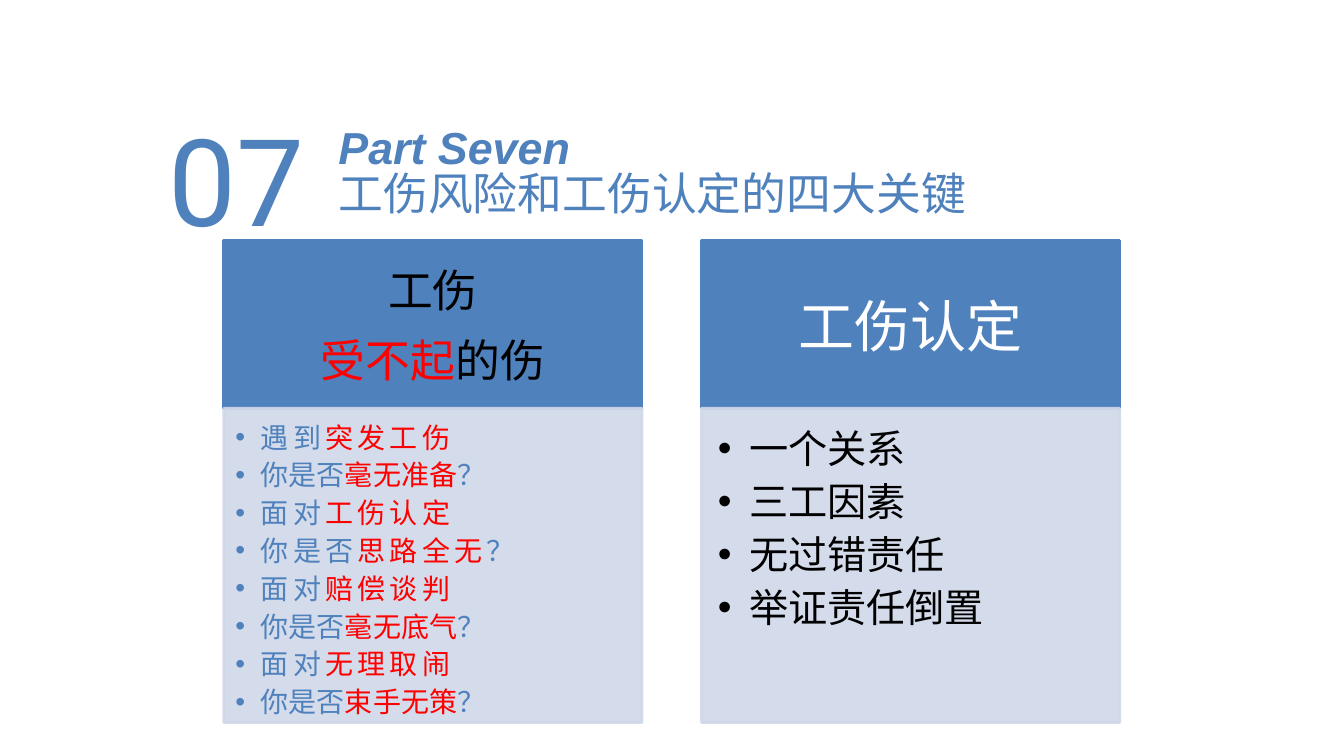
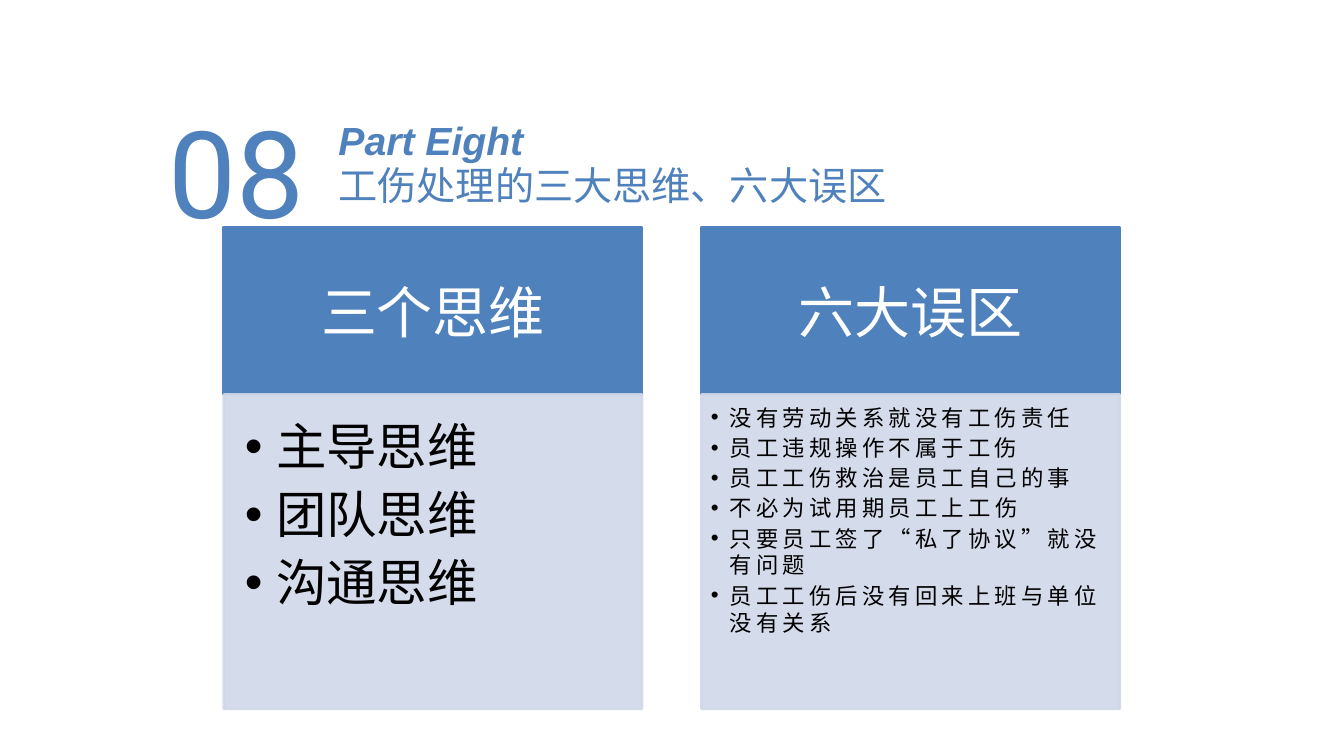
"""Build two section slides, each with a numbered title and two topic cards."""
from dataclasses import dataclass
from typing import NamedTuple

from pptx import Presentation
from pptx.dml.color import RGBColor
from pptx.enum.shapes import MSO_SHAPE
from pptx.enum.text import MSO_ANCHOR, MSO_AUTO_SIZE, PP_ALIGN
from pptx.oxml.ns import qn
from pptx.util import Cm, Pt

BLUE, PALE, RED, BLACK, WHITE = "4F81BD", "D0D8E8", "FF0000", "000000", "FFFFFF"
CJK = "Noto Sans CJK SC"
NUM_X, TITLE_X = 4.24, 8.53
CARD_X, CARD_W, CARD_STEP = 5.64, 10.54, 12.04
HEAD_H, BODY_H = 4.22, 7.92


class Run(NamedTuple):
    text: str
    color: str = BLACK
    spc: float = 0


class Style(NamedTuple):
    size: float
    font: str = CJK
    line: float = 1.2
    gap: float = 0
    align: PP_ALIGN = PP_ALIGN.LEFT
    bold: bool = False
    indent: float = 0


@dataclass
class Card:
    head: list[list[Run]]
    head_style: Style
    body: list[list[Run]]
    body_size: float
    indent: float


@dataclass
class Section:
    number: str
    kicker: str
    title: str
    size: float
    number_y: float
    kicker_y: float
    title_y: float
    cards_y: float
    cards: list[Card]


def paint(fill, color: str) -> None:
    fill.solid()
    fill.fore_color.rgb = RGBColor.from_string(color)


def add_bullet(p, indent: float) -> None:
    pPr = p._p.get_or_add_pPr()
    pPr.set("marL", str(Cm(indent)))
    pPr.set("indent", str(-Cm(indent)))
    for tag, key, value in (("a:buFont", "typeface", "Arial"), ("a:buChar", "char", "•")):
        pPr.append(pPr.makeelement(qn(tag), {key: value}))


def add_run(p, run: Run, style: Style) -> None:
    r = p.add_run()
    r.text = run.text
    r.font.size = Pt(style.size)
    r.font.bold = r.font.italic = style.bold
    r.font.name = style.font
    paint(r.font.fill, run.color)
    rPr = r._r.get_or_add_rPr()
    rPr.set("spc", str(int(run.spc * 100)))
    rPr.append(rPr.makeelement(qn("a:ea"), {"typeface": CJK}))


def write(sp, paras: list[list[Run]], style: Style, insets=(0, 0, 0, 0),
          anchor: MSO_ANCHOR = MSO_ANCHOR.TOP) -> None:
    tf = sp.text_frame
    tf.word_wrap = True
    tf.auto_size = MSO_AUTO_SIZE.NONE
    tf.vertical_anchor = anchor
    tf.margin_left, tf.margin_top, tf.margin_right, tf.margin_bottom = map(Cm, insets)
    for i, runs in enumerate(paras):
        p = tf.add_paragraph() if i else tf.paragraphs[0]
        if style.indent:
            add_bullet(p, style.indent)
        p.alignment = style.align
        p.line_spacing = Pt(style.size * style.line)
        p.space_before = Pt(style.size * style.gap if i else 0)
        for run in runs:
            add_run(p, run, style)


def add_label(s, x: float, y: float, w: float, h: float, text: str, style: Style) -> None:
    sp = s.shapes.add_textbox(Cm(x), Cm(y), Cm(w), Cm(h))
    write(sp, [[Run(text, BLUE)]], style)


def add_panel(s, x: float, y: float, h: float, color: str, alpha: int = 100):
    sp = s.shapes.add_shape(MSO_SHAPE.RECTANGLE, Cm(x), Cm(y), Cm(CARD_W), Cm(h))
    sp.shadow.inherit = False
    paint(sp.fill, color)
    paint(sp.line.fill, color)
    sp.line.width = Pt(2)
    if alpha < 100:
        for clr in sp.element.spPr.iter(qn("a:srgbClr")):
            clr.append(clr.makeelement(qn("a:alpha"), {"val": str(alpha * 1000)}))
    return sp


def add_card(s, x: float, y: float, card: Card) -> None:
    head = add_panel(s, x, y, HEAD_H, BLUE)
    write(head, card.head, card.head_style, (0.79, 0.46, 0.79, 0.46), MSO_ANCHOR.MIDDLE)
    body = add_panel(s, x, y + HEAD_H, BODY_H, PALE, 90)
    pad = card.body_size / 68
    write(body, card.body, Style(card.body_size, gap=0.15, indent=card.indent),
          (pad, pad, pad * 4 / 3, pad * 1.5))


def add_section(prs, sec: Section) -> None:
    s = prs.slides.add_slide(prs.slide_layouts[5])
    title = s.shapes.title
    title.left, title.top = Cm(TITLE_X), Cm(sec.title_y)
    title.width, title.height = Cm(16.2), Cm(1.14)
    write(title, [[Run(sec.title, BLUE)]], Style(sec.size, line=1))
    add_label(s, NUM_X, sec.number_y, 4.22, 4.06, sec.number, Style(86.5, "Roboto", 1.317))
    add_label(s, TITLE_X, sec.kicker_y, 9.47, 1.27, sec.kicker,
              Style(sec.size, "Arial", 1.117, bold=True))
    for i, card in enumerate(sec.cards):
        add_card(s, CARD_X + i * CARD_STEP, sec.cards_y, card)


def plain(*lines: str, color: str = BLACK, spc: float = 0) -> list[list[Run]]:
    return [[Run(line, color, spc)] for line in lines]


def accent(lead: str, key: str, tail: str = "", spc: float = 0) -> list[Run]:
    runs = [Run(lead, BLUE, spc), Run(key, RED, spc)]
    return runs + [Run(tail, BLUE, spc)] if tail else runs


def head_style(size: float = 40, font: str = CJK) -> Style:
    return Style(size, font, gap=0.35, align=PP_ALIGN.CENTER)


SECTIONS = [
    Section("07", "Part Seven", "工伤风险和工伤认定的四大关键", 32, 2.31, 3.12, 4.39, 6.07, [
        Card([[Run("工伤")], [Run("受不起", RED), Run("的伤")]], head_style(32), [
            accent("遇到", "突发工伤", spc=3),
            accent("你是否", "毫无准备", "？"),
            accent("面对", "工伤认定", spc=3),
            accent("你是否", "思路全无", "？", spc=3),
            accent("面对", "赔偿谈判", spc=3),
            accent("你是否", "毫无底气", "？"),
            accent("面对", "无理取闹", spc=3),
            accent("你是否", "束手无策", "？"),
        ], 20, 0.64),
        Card(plain("工伤认定", color=WHITE), head_style(font="Calibri"),
             plain("一个关系", "三工因素", "无过错责任", "举证责任倒置"), 28, 0.79),
    ]),
    Section("08", "Part Eight", "工伤处理的三大思维、六大误区", 28, 2.11, 3.02, 4.26, 5.72, [
        Card(plain("三个思维", color=WHITE), head_style(),
             plain("主导思维", "团队思维", "沟通思维"), 36, 0.79),
        Card(plain("六大误区", color=WHITE), head_style(), [
            *plain("没有劳动关系就没有工伤责任", "员工违规操作不属于工伤",
                   "员工工伤救治是员工自己的事", spc=3),
            [Run("不必为试用期员工上工", spc=3), Run("伤")],
            *plain("只要员工签了“私了协议”就没有问题",
                   "员工工伤后没有回来上班与单位没有关系", spc=3),
        ], 16, 0.48),
    ]),
]


def main() -> None:
    prs = Presentation()
    prs.slide_width, prs.slide_height = Cm(33.87), Cm(19.05)
    for sec in SECTIONS:
        add_section(prs, sec)
    prs.save("out.pptx")


if __name__ == "__main__":
    main()
